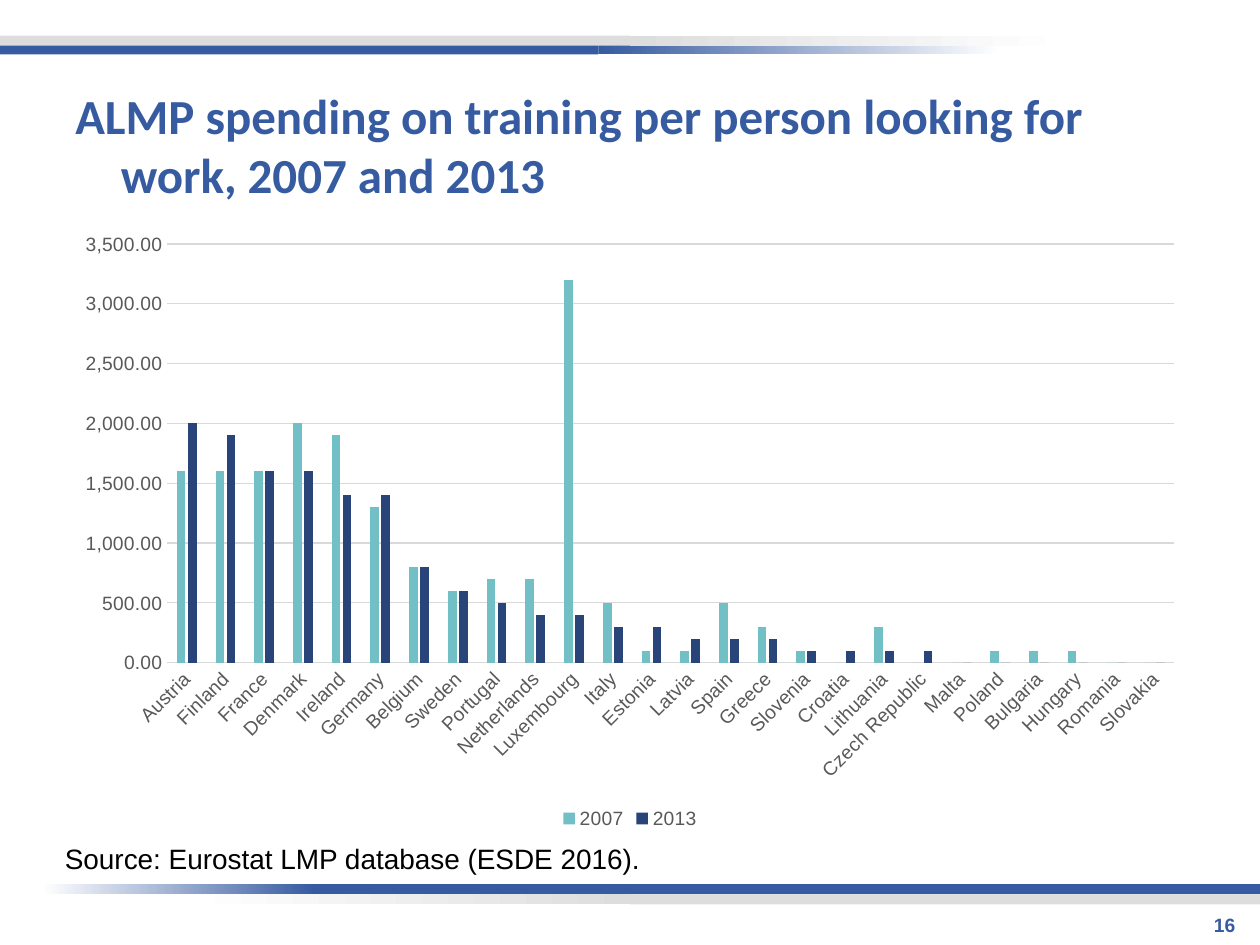
"""Build the slide on ALMP training spending, 2007 and 2013."""
from pptx import Presentation
from pptx.chart.data import CategoryChartData
from pptx.dml.color import RGBColor
from pptx.enum.chart import XL_CHART_TYPE, XL_LEGEND_POSITION, XL_TICK_MARK
from pptx.enum.shapes import MSO_SHAPE
from pptx.enum.text import MSO_ANCHOR, PP_ALIGN
from pptx.util import Pt

BLUE = RGBColor(0x36, 0x5B, 0xA0)
SILVER = RGBColor(0xDD, 0xDD, 0xDD)
WHITE = RGBColor(0xFF, 0xFF, 0xFF)
BLACK = RGBColor(0, 0, 0)
GREY = RGBColor(0x59, 0x59, 0x59)
RULE = RGBColor(0xD9, 0xD9, 0xD9)
TEAL = RGBColor(0x72, 0xBF, 0xC5)
NAVY = RGBColor(0x28, 0x44, 0x78)


def style(font, name, size, color, bold=False):
    font.name, font.size, font.bold = name, Pt(size), bold
    font.color.rgb = color


def write(box, words, name, size, color, bold=False, wrap=True):
    frame = slide.shapes.add_textbox(*map(Pt, box)).text_frame
    frame.word_wrap = wrap
    line = frame.paragraphs[0]
    line.text = words
    style(line.font, name, size, color, bold)
    return frame


deck = Presentation()
deck.slide_width, deck.slide_height = Pt(720), Pt(540)
slide = deck.slides.add_slide(deck.slide_layouts[6])

bands = [
    (0, 25.4, 342, BLUE, BLUE),
    (342, 25.4, 229.5, BLUE, WHITE),
    (180, 505.25, 540, BLUE, BLUE),
    (24, 505.25, 156, WHITE, BLUE),
    (0, 20.4, 360, SILVER, SILVER),
    (360, 20.4, 252, SILVER, WHITE),
    (360, 511, 360, SILVER, SILVER),
    (108, 511, 252, WHITE, SILVER),
]
for left, top, width, start, end in bands:
    band = slide.shapes.add_shape(MSO_SHAPE.RECTANGLE, Pt(left), Pt(top), Pt(width), Pt(5.75))
    band.shadow.inherit = False
    band.line.fill.background()
    if start == end:
        band.fill.solid()
        band.fill.fore_color.rgb = start
    else:
        band.fill.gradient()
        band.fill.gradient_angle = 0
        for stop, color in zip(band.fill.gradient_stops, (start, end)):
            stop.color.rgb = color

title = write((36, 48, 648, 69), "ALMP spending on training per person looking for work, 2007 and 2013",
              "Calibri", 28, BLUE, True)
title.vertical_anchor = MSO_ANCHOR.MIDDLE
props = title.paragraphs[0]._p.get_or_add_pPr()
props.set("marL", str(Pt(26)))
props.set("indent", str(Pt(-26)))

page = write((545, 518.4, 168, 37.5), "16", "Arial", 11, BLUE, True)
page.paragraphs[0].alignment = PP_ALIGN.RIGHT

spend = [
    ("Austria", 1600, 2000), ("Finland", 1600, 1900), ("France", 1600, 1600),
    ("Denmark", 2000, 1600), ("Ireland", 1900, 1400), ("Germany", 1300, 1400),
    ("Belgium", 800, 800), ("Sweden", 600, 600), ("Portugal", 700, 500),
    ("Netherlands", 700, 400), ("Luxembourg", 3200, 400), ("Italy", 500, 300),
    ("Estonia", 100, 300), ("Latvia", 100, 200), ("Spain", 500, 200),
    ("Greece", 300, 200), ("Slovenia", 100, 100), ("Croatia", 0, 100),
    ("Lithuania", 300, 100), ("Czech Republic", 0, 100), ("Malta", 0, 0),
    ("Poland", 100, 0), ("Bulgaria", 100, 0), ("Hungary", 100, 0),
    ("Romania", 0, 0), ("Slovakia", 0, 0),
]
lands, early, late = zip(*spend)
data = CategoryChartData(number_format="#,##0.00")
data.categories = lands
data.add_series("2007", early)
data.add_series("2013", late)
chart = slide.shapes.add_chart(XL_CHART_TYPE.COLUMN_CLUSTERED, Pt(36), Pt(126), Pt(648), Pt(351), data).chart
style(chart.font, "Arial", 10, BLACK)
chart.has_title = False
chart.has_legend = True
chart.legend.position = XL_LEGEND_POSITION.BOTTOM
chart.legend.include_in_layout = False
style(chart.legend.font, "Arial", 11, GREY)

plot = chart.plots[0]
plot.vary_by_categories = False
plot.gap_width, plot.overlap = 219, -27
for series, color in zip(plot.series, (TEAL, NAVY)):
    series.format.fill.solid()
    series.format.fill.fore_color.rgb = color
    series.invert_if_negative = False

across, up = chart.category_axis, chart.value_axis
for axis in (across, up):
    axis.major_tick_mark = axis.minor_tick_mark = XL_TICK_MARK.NONE
    style(axis.tick_labels.font, "Arial", 11, GREY)
across._element.txPr.bodyPr.set("rot", "-2700000")
up.minimum_scale, up.maximum_scale, up.major_unit = 0, 3500, 500
up.tick_labels.number_format = "#,##0.00"
up.tick_labels.number_format_is_linked = False
up.has_major_gridlines = True
up.format.line.fill.background()
for line in (across.format.line, up.major_gridlines.format.line):
    line.color.rgb = RULE
    line.width = Pt(0.75)

write((30, 477.5, 352, 26.6), "Source: Eurostat LMP database (ESDE 2016).", "Arial", 16, BLACK, wrap=False)

deck.save("out.pptx")
